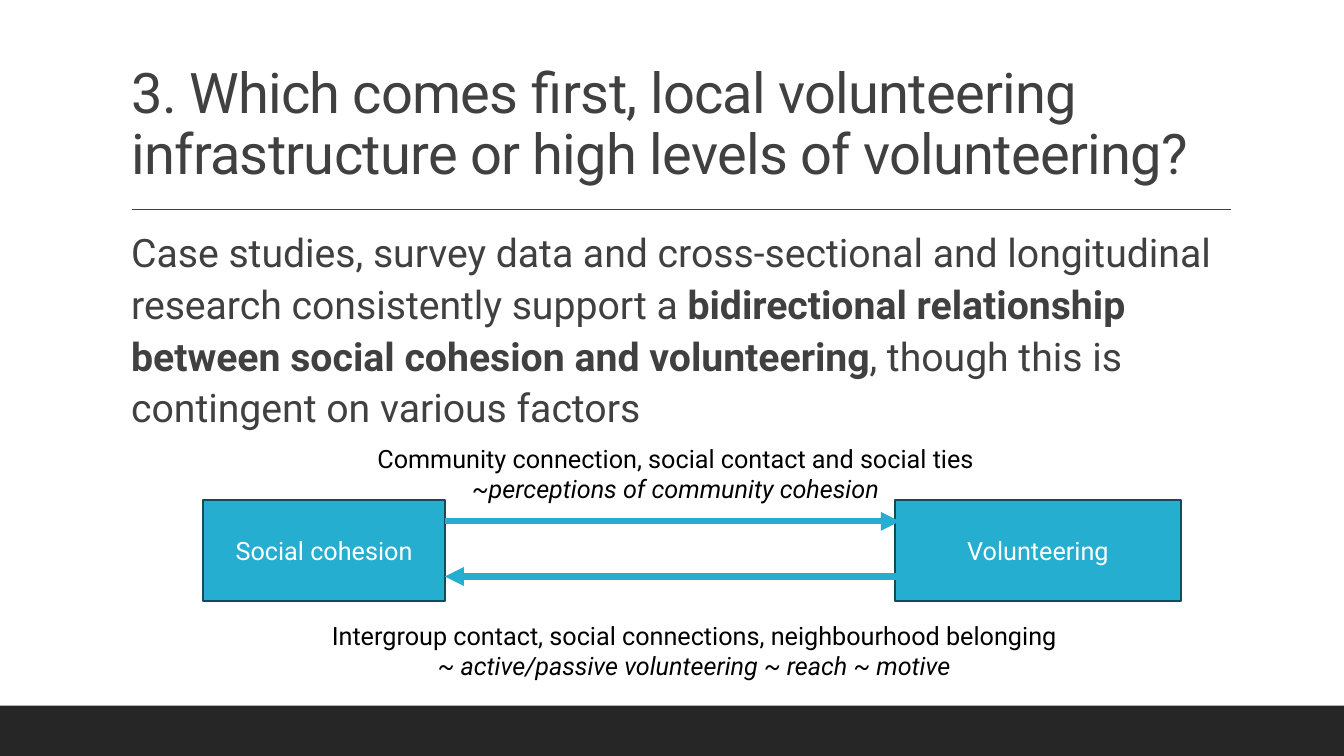
"""Build the slide on the two-way link between social cohesion and volunteering."""
from lxml.etree import SubElement
from pptx import Presentation
from pptx.dml.color import RGBColor
from pptx.enum.shapes import MSO_CONNECTOR, MSO_SHAPE
from pptx.enum.text import MSO_ANCHOR, MSO_AUTO_SIZE, PP_ALIGN
from pptx.oxml.ns import qn
from pptx.util import Pt

COLORS = {name: RGBColor.from_string(value) for name, value in {
    "text": "404040", "black": "000000", "white": "FFFFFF",
    "blue": "25AECF", "outline": "104C5B", "footer": "262626",
}.items()}


def add_run(paragraph, text, size=18, color="black", bold=False, italic=False, tracking=0):
    run = paragraph.add_run()
    run.text = text
    run.font.name = "Roboto"
    run.font.size = Pt(size)
    run.font.bold = bold
    run.font.italic = italic
    run.font.color.rgb = COLORS[color]
    if tracking:
        run.font._element.set("spc", str(tracking))


def add_line(start, end, y, color, weight, arrow=False):
    line = slide.shapes.add_connector(MSO_CONNECTOR.STRAIGHT, Pt(start), Pt(y), Pt(end), Pt(y))
    line.line.color.rgb = COLORS[color]
    line.line.width = Pt(weight)
    if arrow:
        SubElement(line.line._get_or_add_ln(), qn("a:tailEnd"), type="triangle")
    SubElement(line._element.spPr, qn("a:effectLst"))


presentation = Presentation()
presentation.slide_width, presentation.slide_height = Pt(960), Pt(540)
slide = presentation.slides.add_slide(presentation.slide_layouts[5])

footer = slide.shapes.add_shape(MSO_SHAPE.RECTANGLE, 0, Pt(504), Pt(960), Pt(36))
footer.shadow.inherit = False
footer.fill.solid()
footer.fill.fore_color.rgb = COLORS["footer"]
footer.line.fill.background()
add_line(94.5, 879, 149.5, "text", 1)

title = slide.shapes.title
title.left, title.top, title.width, title.height = Pt(86.6), Pt(22.5), Pt(792), Pt(114.2)
title.text_frame.auto_size = MSO_AUTO_SIZE.NONE
title.text_frame.vertical_anchor = MSO_ANCHOR.BOTTOM
heading = title.text_frame.paragraphs[0]
heading.alignment = PP_ALIGN.LEFT
heading.line_spacing = 0.9
add_run(heading, "3. Which comes first, local volunteering infrastructure or high levels of volunteering?",
        size=40, color="text", tracking=-50)

finding = slide.shapes.add_textbox(Pt(86.6), Pt(156.2), Pt(792), Pt(167)).text_frame
finding.word_wrap = True
finding.margin_left, finding.margin_right = Pt(7.2), 0
statement = finding.paragraphs[0]
statement.line_spacing = 1.1
statement.space_before, statement.space_after = Pt(12), Pt(2)
for text, bold in [
    ("Case studies, survey data and cross-sectional and longitudinal research consistently support a ", False),
    ("bidirectional relationship between social cohesion and volunteering", True),
    (", though this is contingent on various factors", False),
]:
    add_run(statement, text, size=28, color="text", bold=bold)

for concept, left, width in [("Social cohesion", 145, 173), ("Volunteering", 639.4, 204)]:
    box = slide.shapes.add_shape(MSO_SHAPE.RECTANGLE, Pt(left), Pt(357.1), Pt(width), Pt(72))
    box.shadow.inherit = False
    box.fill.solid()
    box.fill.fore_color.rgb = COLORS["blue"]
    box.line.color.rgb = COLORS["outline"]
    box.line.width = Pt(1.25)
    box.text_frame.vertical_anchor = MSO_ANCHOR.MIDDLE
    label = box.text_frame.paragraphs[0]
    label.alignment = PP_ALIGN.CENTER
    add_run(label, concept, color="white")

for start, end, y in [(317.8, 642.7, 372.4), (642.7, 317.8, 411.8)]:
    add_line(start, end, y, "blue", 4.5, arrow=True)

for pathway, factors, left, top, width in [
    ("Community connection, social contact and social ties",
     "~perceptions of community cohesion", 257, 313.2, 451.4),
    ("Intergroup contact, social connections, neighbourhood belonging",
     "~ active/passive volunteering ~ reach ~ motive", 223, 439.2, 546),
]:
    caption = slide.shapes.add_textbox(Pt(left), Pt(top), Pt(width), Pt(51)).text_frame
    caption.word_wrap = True
    for paragraph, text, italic in [
        (caption.paragraphs[0], pathway, False),
        (caption.add_paragraph(), factors, True),
    ]:
        paragraph.alignment = PP_ALIGN.CENTER
        add_run(paragraph, text, italic=italic)

presentation.save("out.pptx")
